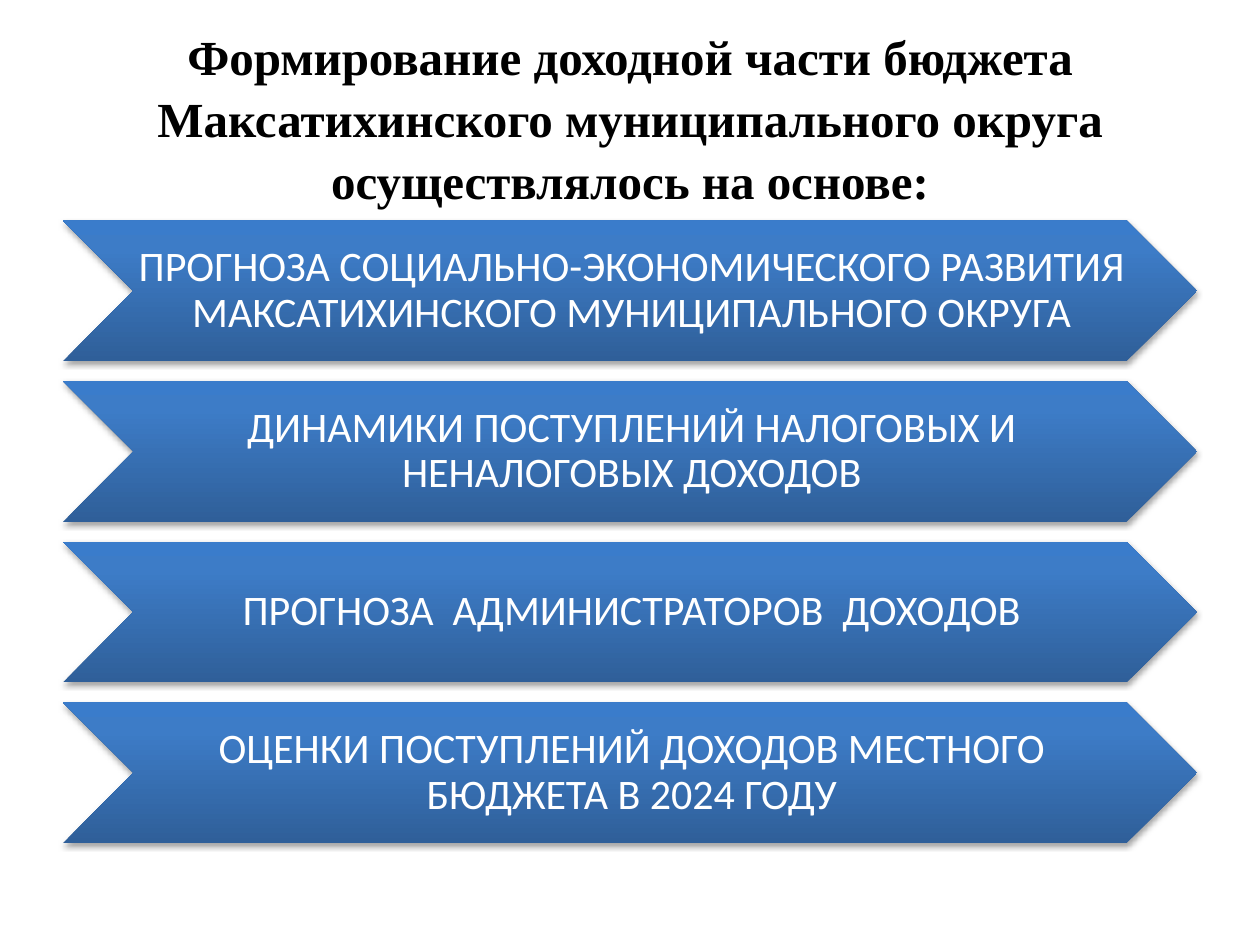
from lxml import etree
from pptx import Presentation
from pptx.dml.color import RGBColor as RGB
from pptx.enum.shapes import MSO_SHAPE as Form
from pptx.enum.text import MSO_ANCHOR as Anchor, MSO_AUTO_SIZE as Fit, PP_ALIGN as Align
from pptx.oxml.ns import qn
from pptx.util import Pt

BLACK = RGB(0x00, 0x00, 0x00)
WHITE = RGB(0xFF, 0xFF, 0xFF)
DEEP = RGB(0x2F, 0x5F, 0x99)
MID = RGB(0x3D, 0x7C, 0xC7)
LIGHT = RGB(0x3A, 0x7C, 0xCB)

TITLE = "Формирование доходной части бюджета Максатихинского муниципального округа осуществлялось на основе:"
BASES = [
    "ПРОГНОЗА СОЦИАЛЬНО-ЭКОНОМИЧЕСКОГО РАЗВИТИЯ МАКСАТИХИНСКОГО МУНИЦИПАЛЬНОГО ОКРУГА",
    "ДИНАМИКИ ПОСТУПЛЕНИЙ НАЛОГОВЫХ И НЕНАЛОГОВЫХ ДОХОДОВ",
    "ПРОГНОЗА  АДМИНИСТРАТОРОВ  ДОХОДОВ",
    "ОЦЕНКИ ПОСТУПЛЕНИЙ ДОХОДОВ МЕСТНОГО БЮДЖЕТА В 2024 ГОДУ",
]

# Layout in points
LEFT, WIDTH = 36, 648
TOP, HEIGHT, STEP = 126, 80.4, 91.8


class Deck:
    """Holds the style and the current slide."""
    head_font, body_font = "Times New Roman", "Calibri"
    stops = [(0, DEEP), (80, MID), (100, LIGHT)]

    def __init__(self):
        self.prs = Presentation()
        self.prs.slide_width, self.prs.slide_height = Pt(720), Pt(540)
        self.slide = self.prs.slides.add_slide(self.prs.slide_layouts[5])

    def label(self, shape, text, font, size, color, bold, space):
        frame = shape.text_frame
        frame.text = text
        frame.word_wrap = True
        frame.auto_size = Fit.NONE
        frame.vertical_anchor = Anchor.MIDDLE
        para = frame.paragraphs[0]
        para.alignment = Align.CENTER
        para.line_spacing = space
        face = para.runs[0].font
        face.name, face.size, face.bold = font, Pt(size), bold
        face.color.rgb = color
        return frame

    def title(self, text, left, top, width, height):
        box = self.slide.shapes.title
        box.left, box.top, box.width, box.height = map(Pt, (left, top, width, height))
        self.label(box, text, self.head_font, 28, BLACK, True, 1.05)

    def arrow(self, text, left, top, width, height):
        shape = self.slide.shapes.add_shape(
            Form.CHEVRON, *map(Pt, (left, top, width, height)))
        shape.line.fill.background()
        self.shade(shape)
        self.shadow(shape)
        frame = self.label(shape, text, self.body_font, 24, WHITE, False, 0.9)
        frame.margin_left, frame.margin_right = Pt(2), 0
        frame.margin_top = frame.margin_bottom = Pt(1.5)

    def shade(self, shape):
        # Three stops, running from the bottom edge up
        shape.fill.gradient()
        shape.fill.gradient_angle = 90
        stops = shape.element.spPr.find(qn("a:gradFill")).find(qn("a:gsLst"))
        for old in list(stops):
            stops.remove(old)
        for pos, color in self.stops:
            stop = etree.SubElement(stops, qn("a:gs"), pos=str(pos * 1000))
            etree.SubElement(stop, qn("a:srgbClr"), val=str(color))

    def shadow(self, shape):
        # Soft shadow straight below
        shape.shadow.inherit = False
        effects = shape.element.spPr.find(qn("a:effectLst"))
        outer = etree.SubElement(
            effects, qn("a:outerShdw"), blurRad=str(int(Pt(3.1))),
            dist=str(int(Pt(1.8))), dir="5400000", rotWithShape="0")
        color = etree.SubElement(outer, qn("a:srgbClr"), val=str(BLACK))
        etree.SubElement(color, qn("a:alpha"), val="35000")


def main():
    deck = Deck()
    # Title
    deck.title(TITLE, LEFT, 21.6, WIDTH, 90)
    # Stack of arrows
    for row, text in enumerate(BASES):
        deck.arrow(text, LEFT, TOP + row * STEP, WIDTH, HEIGHT)
    deck.prs.save("out.pptx")


if __name__ == "__main__":
    main()
